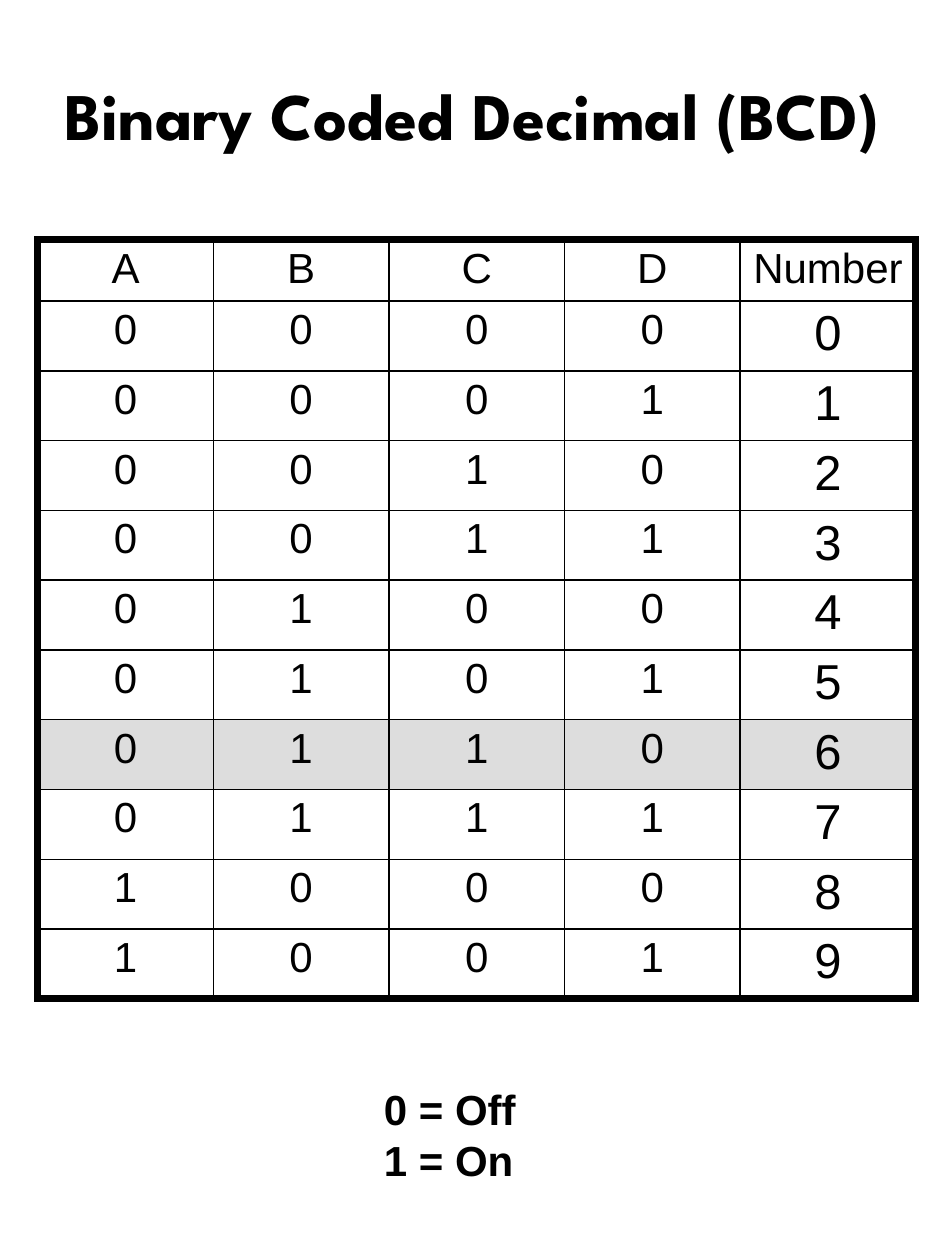
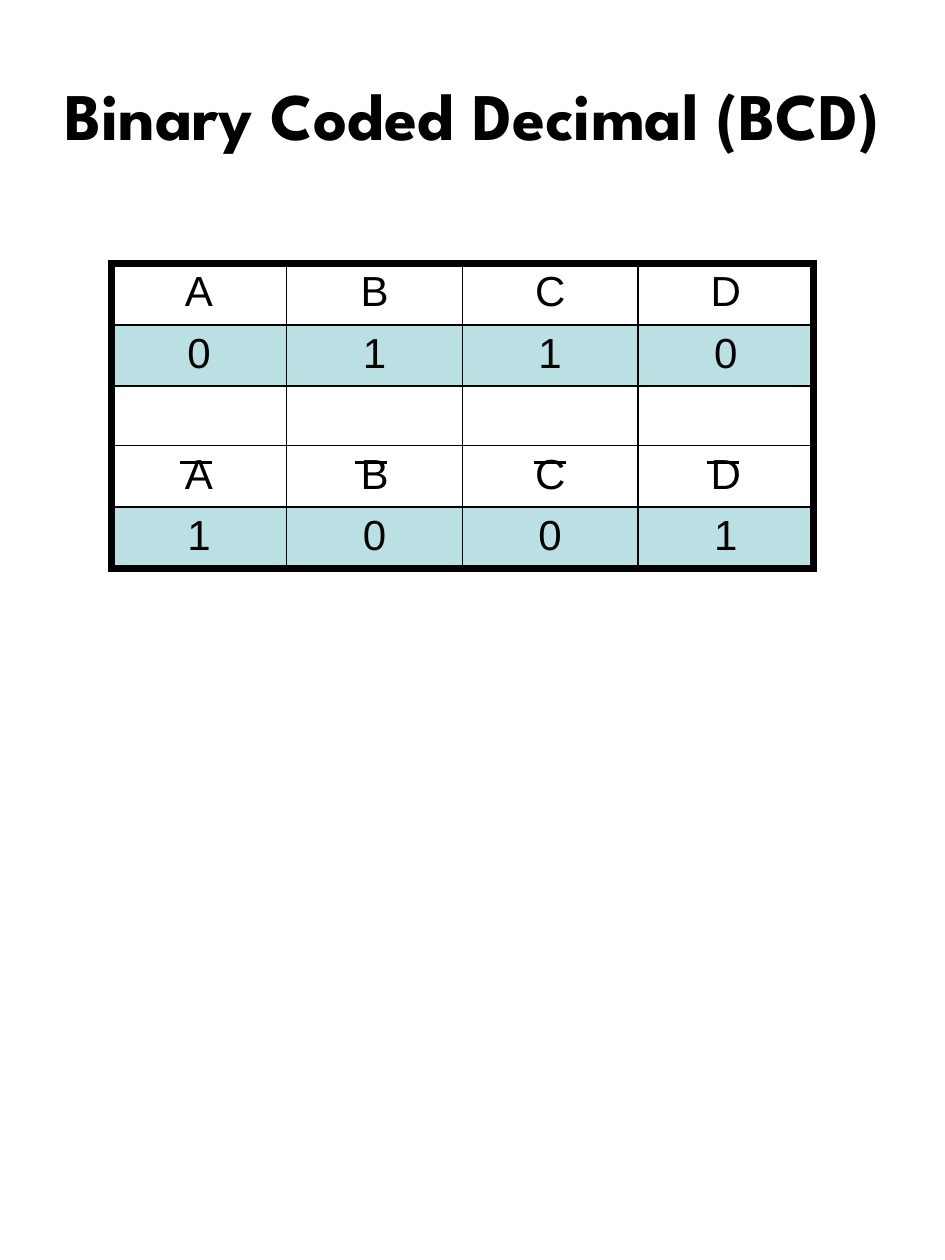
from dataclasses import dataclass

from pptx import Presentation
from pptx.dml.color import RGBColor
from pptx.enum.shapes import MSO_CONNECTOR as Connector
from pptx.enum.text import MSO_ANCHOR as Anchor, MSO_AUTO_SIZE as AutoSize, PP_ALIGN as Align
from pptx.oxml.ns import qn
from pptx.oxml.xmlchemy import OxmlElement
from pptx.util import Cm, Pt

COLOURS = {"ink": "000000", "chosen": "DDDDDD", "bits": "BBE0E3"}
BODY_FONT = "Arial"
TITLE_FONT = "League Spartan"
TITLE = "Binary Coded Decimal (BCD)"
SLIDE_WIDTH, SLIDE_HEIGHT = 19.05, 25.4
COLUMN_WIDTH = 3.54
HEADER_HEIGHT, DIGIT_HEIGHT = 1.2, 1.36
CELL_MARGIN = 0.11
FRAME_WEIGHT, GRID_WEIGHT = 4.5, 1
LETTERS = ["A", "B", "C", "D"]
OVERLINE_STARTS = (3.63, 7.16, 10.77, 14.25)
OVERLINE_TOP, OVERLINE_LENGTH = 9.32, 0.64


@dataclass(frozen=True)
class TruthRow:
    entries: list[str]
    height: float = HEADER_HEIGHT
    shade: str | None = None
    last_size: float = 24


def rgb(name: str) -> RGBColor:
    return RGBColor.from_string(COLOURS[name])


def add_run(paragraph, text: str, size: float, font: str = BODY_FONT, bold: bool = False) -> None:
    run = paragraph.add_run()
    run.text = text
    run.font.name = font
    run.font.size = Pt(size)
    run.font.bold = bold
    run.font.color.rgb = rgb("ink")


def add_border(cell, side: str, weight: float) -> None:
    border = OxmlElement(f"a:ln{side}")
    border.set("w", str(Pt(weight)))
    ink = OxmlElement("a:solidFill")
    colour = OxmlElement("a:srgbClr")
    colour.set("val", COLOURS["ink"])
    ink.append(colour)
    border.append(ink)
    cell._tc.get_or_add_tcPr().append(border)


def fill_entry(cell, text: str, size: float) -> None:
    paragraph = cell.text_frame.paragraphs[0]
    paragraph.alignment = Align.CENTER
    space_before = OxmlElement("a:spcBef")
    share = OxmlElement("a:spcPct")
    share.set("val", "20000")
    space_before.append(share)
    paragraph._p.get_or_add_pPr().append(space_before)
    add_run(paragraph, text, size)


def add_truth_table(slide, left: float, top: float, rows: list[TruthRow]) -> None:
    last_row, last_column = len(rows) - 1, len(rows[0].entries) - 1
    table = slide.shapes.add_table(
        len(rows), last_column + 1, Cm(left), Cm(top),
        Cm(COLUMN_WIDTH * (last_column + 1)), Cm(sum(row.height for row in rows)),
    ).table
    table.first_row = table.horz_banding = False
    for column in table.columns:
        column.width = Cm(COLUMN_WIDTH)
    for r, row in enumerate(rows):
        table.rows[r].height = Cm(row.height)
        for c, entry in enumerate(row.entries):
            cell = table.cell(r, c)
            cell.margin_top = cell.margin_bottom = Cm(CELL_MARGIN)
            outer_sides = {"L": c == 0, "R": c == last_column, "T": r == 0, "B": r == last_row}
            for side, outer in outer_sides.items():
                add_border(cell, side, FRAME_WEIGHT if outer else GRID_WEIGHT)
            if row.shade:
                cell.fill.solid()
                cell.fill.fore_color.rgb = rgb(row.shade)
            else:
                cell.fill.background()
            if entry:
                fill_entry(cell, entry, row.last_size if c == last_column else 24)


def add_titled_slide(deck):
    slide = deck.slides.add_slide(deck.slide_layouts[5])
    title = slide.shapes.title
    title.left, title.top = Cm(0), Cm(1.37)
    title.width, title.height = Cm(SLIDE_WIDTH), Cm(1.85)
    frame = title.text_frame
    frame.word_wrap = True
    frame.auto_size = AutoSize.SHAPE_TO_FIT_TEXT
    frame.vertical_anchor = Anchor.TOP
    frame.paragraphs[0].alignment = Align.CENTER
    add_run(frame.paragraphs[0], TITLE, 38, TITLE_FONT, True)
    return slide


def add_legend(slide, meanings: list[str]) -> None:
    frame = slide.shapes.add_textbox(Cm(7.49), Cm(21.72), Cm(3.18), Cm(2.29)).text_frame
    frame.word_wrap = False
    frame.auto_size = AutoSize.SHAPE_TO_FIT_TEXT
    for i, meaning in enumerate(meanings):
        paragraph = frame.add_paragraph() if i else frame.paragraphs[0]
        add_run(paragraph, meaning, 24, bold=True)


def add_overline(slide, start: float) -> None:
    overline = slide.shapes.add_connector(
        Connector.STRAIGHT, Cm(start), Cm(OVERLINE_TOP),
        Cm(start + OVERLINE_LENGTH), Cm(OVERLINE_TOP),
    )
    overline.line.color.rgb = rgb("ink")
    overline.line.width = Pt(1.5)
    overline._element.find(qn("p:spPr")).append(OxmlElement("a:effectLst"))


def build_code_slide(deck) -> None:
    slide = add_titled_slide(deck)
    digits = [
        TruthRow([*f"{n:04b}", str(n)], DIGIT_HEIGHT, "chosen" if n == 6 else None, 28)
        for n in range(10)
    ]
    add_truth_table(slide, 0.76, 4.83, [TruthRow(LETTERS + ["Number"]), *digits])
    add_legend(slide, ["0 = Off", "1 = On"])


def build_complement_slide(deck) -> None:
    slide = add_titled_slide(deck)
    add_truth_table(slide, 2.24, 5.31, [
        TruthRow(LETTERS),
        TruthRow([*"0110"], shade="bits"),
        TruthRow([""] * len(LETTERS)),
        TruthRow(LETTERS),
        TruthRow([*"1001"], shade="bits"),
    ])
    for start in OVERLINE_STARTS:
        add_overline(slide, start)


def main() -> None:
    deck = Presentation()
    deck.slide_width, deck.slide_height = Cm(SLIDE_WIDTH), Cm(SLIDE_HEIGHT)
    build_code_slide(deck)
    build_complement_slide(deck)
    deck.save("out.pptx")


if __name__ == "__main__":
    main()
